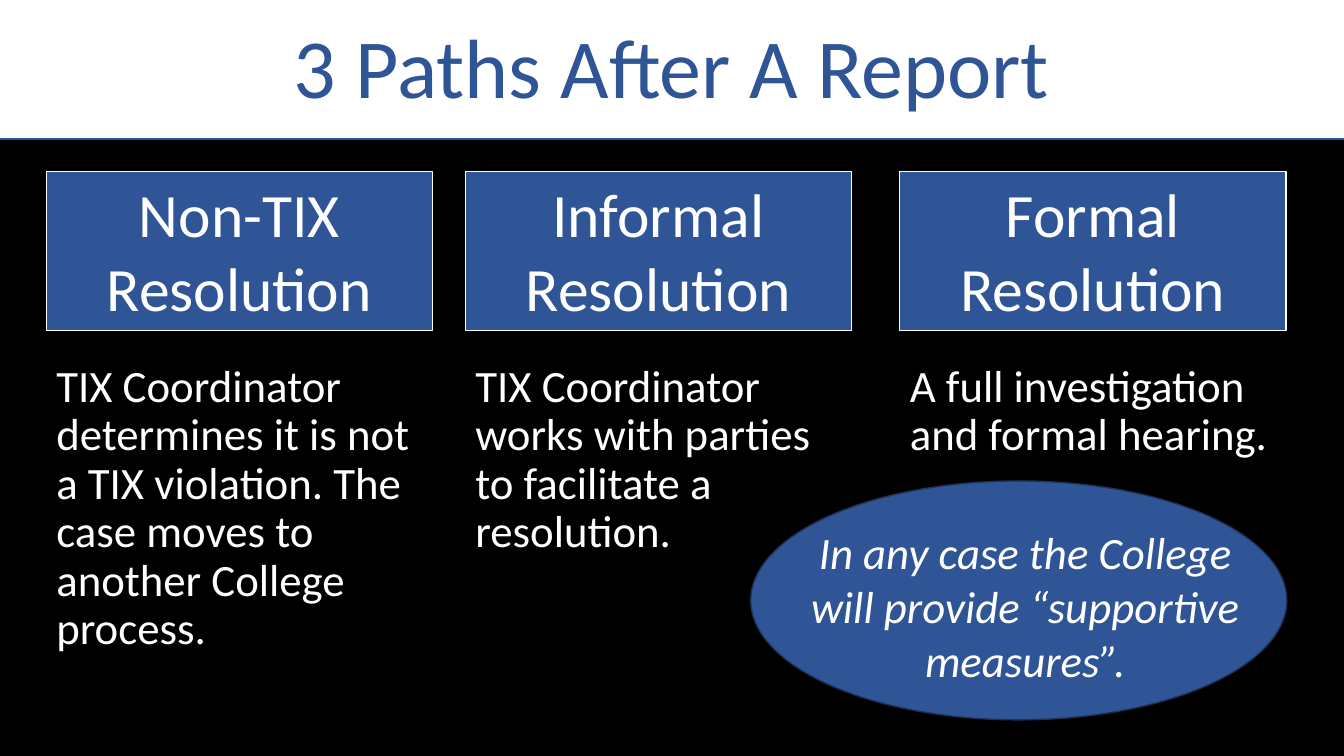
import pptx
import pptx.util
import pptx.dml.color
import pptx.enum.shapes
import pptx.enum.text

Cm = pptx.util.Cm
Pt = pptx.util.Pt
KIND = pptx.enum.shapes.MSO_SHAPE
ALIGN = pptx.enum.text.PP_ALIGN
ANCHOR = pptx.enum.text.MSO_ANCHOR

HUES = {"black": "000000", "white": "FFFFFF", "blue": "2F5597", "navy": "1E3256"}

PATHS = [
    (1.17, "Non-TIX Resolution",
     "TIX Coordinator determines it is not a TIX violation. "
     "The case moves to another College process."),
    (11.73, "Informal Resolution",
     "TIX Coordinator works with parties to facilitate a resolution."),
    (22.68, "Formal Resolution", "A full investigation and formal hearing."),
]


def hue(name):
    """Return the named colour."""
    return pptx.dml.color.RGBColor.from_string(HUES[name])


def write(shape, text, size=32, color="white", align=ALIGN.CENTER,
          anchor=ANCHOR.TOP, space=1.0, after=0, italic=False):
    """Put one formatted paragraph into a shape."""
    frame = shape.text_frame
    frame.word_wrap = True
    frame.vertical_anchor = anchor
    para = frame.paragraphs[0]
    para.alignment = align
    para.line_spacing = space
    para.space_after = Pt(after)
    run = para.add_run()
    run.text = text
    run.font.name = "Calibri"
    run.font.size = Pt(size)
    run.font.italic = italic
    run.font.color.rgb = hue(color)


def draw(slide, kind, box, fill, line, width):
    """Add a filled and outlined shape."""
    shape = slide.shapes.add_shape(kind, *map(Cm, box))
    shape.shadow.inherit = False
    shape.fill.solid()
    shape.fill.fore_color.rgb = hue(fill)
    shape.line.color.rgb = hue(line)
    shape.line.width = Pt(width)
    return shape


def label(slide, box, text, **style):
    """Add a text box."""
    write(slide.shapes.add_textbox(*map(Cm, box)), text, **style)


def banner(slide, box, text):
    """Place the white title band and its title."""
    left, top, wide, high = box
    draw(slide, KIND.RECTANGLE, box, "white", "blue", 1.75)
    label(slide, (left + 2.66, top + 1.37, wide - 5.32, 1.57), text,
          size=60, color="blue", anchor=ANCHOR.MIDDLE, space=0.9)


def column(slide, box, head, body):
    """Place one path: a heading block above its description."""
    left, top, wide, high = box
    block = draw(slide, KIND.RECTANGLE, (left, top, wide, 4.01),
                 "blue", "white", 0.75)
    write(block, head, size=44)
    label(slide, (left, top + 4.72, wide, high - 4.72), body,
          align=ALIGN.LEFT, space=0.9, after=12)


def callout(slide, box, text):
    """Place the ellipse with its italic remark."""
    left, top, wide, high = box
    draw(slide, KIND.OVAL, box, "blue", "navy", 1)
    label(slide, (left + 0.94, top + 0.99, wide - 1.55, 4.37), text, italic=True)


def main():
    """Build and save the slide."""
    deck = pptx.Presentation()
    deck.slide_width, deck.slide_height = Cm(33.87), Cm(19.05)
    slide = deck.slides.add_slide(deck.slide_layouts[6])
    slide.background.fill.solid()
    slide.background.fill.fore_color.rgb = hue("black")
    banner(slide, (-0.33, -0.36, 34.52, 3.86), "3 Paths After A Report")
    for left, head, body in PATHS:
        column(slide, (left, 4.32, 9.73, 13.71), head, body)
    callout(slide, (18.92, 12.12, 13.51, 6.02),
            "In any case the College will provide “supportive measures”.")
    deck.save("out.pptx")


if __name__ == "__main__":
    main()
